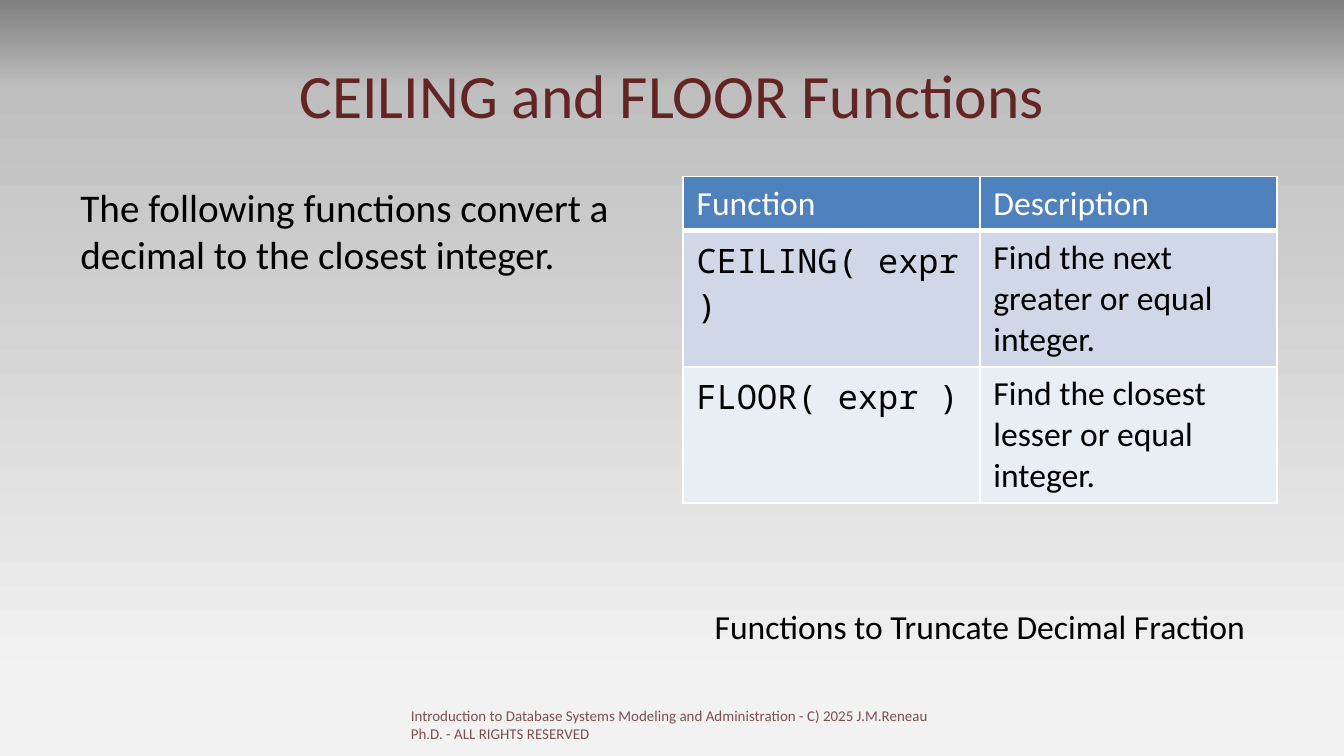
import copy
import pptx
import pptx.dml.color
import pptx.enum.text
import pptx.oxml
import pptx.oxml.ns
import pptx.util

Pt = pptx.util.Pt
RGB = pptx.dml.color.RGBColor
ALIGN = pptx.enum.text.PP_ALIGN
ANCHOR = pptx.enum.text.MSO_ANCHOR

BLACK = RGB(0x00, 0x00, 0x00)
WHITE = RGB(0xFF, 0xFF, 0xFF)
MAROON = RGB(0x63, 0x25, 0x23)
BLUE = RGB(0x4F, 0x81, 0xBD)
BANDS = [RGB(0xD0, 0xD8, 0xE8), RGB(0xE9, 0xED, 0xF4)]
SHADES = [(0, RGB(0x80, 0x80, 0x80)), (0.12, RGB(0xBF, 0xBF, 0xBF)),
          (0.9, RGB(0xF2, 0xF2, 0xF2))]
SANS = "Calibri"
MONO = "Noto Sans Mono"
ROWS = [
    ("Function", "Description"),
    ("CEILING( expr )", "Find the next greater or equal integer."),
    ("FLOOR( expr )", "Find the closest lesser or equal integer."),
]
HEIGHTS = [29, 73, 73]


def paint_back(slide):
    """Fill the background with a vertical grey gradient."""
    fill = slide.background.fill
    fill.gradient()
    fill.gradient_angle = 270
    stops = slide.element.xpath(".//a:gsLst")[0]
    stops.append(copy.deepcopy(stops[-1]))
    for stop, (place, shade) in zip(fill.gradient_stops, SHADES):
        stop.position = place
        stop.color.rgb = shade


def add_run(para, text, size, color, font=SANS):
    """Add one formatted run to a paragraph."""
    run = para.add_run()
    run.text = text
    run.font.size = Pt(size)
    run.font.name = font
    run.font.color.rgb = color
    return run


def add_title(slide, box, text):
    """Move the title placeholder into the box and fill it."""
    title = slide.shapes.title
    title.left, title.top, title.width, title.height = map(Pt, box)
    frame = title.text_frame
    frame.auto_size = pptx.enum.text.MSO_AUTO_SIZE.NONE
    frame.vertical_anchor = ANCHOR.MIDDLE
    para = frame.paragraphs[0]
    para.alignment = ALIGN.CENTER
    add_run(para, text, 33, MAROON)


def add_text(slide, box, text, size, color=BLACK, align=ALIGN.LEFT, gap=0):
    """Add a wrapped text box and return its run."""
    frame = slide.shapes.add_textbox(*map(Pt, box)).text_frame
    frame.word_wrap = True
    para = frame.paragraphs[0]
    para.alignment = align
    para.space_before = Pt(gap)
    return add_run(para, text, size, color)


def add_foot(slide, box, text):
    """Add the footer in slightly clear maroon."""
    run = add_text(slide, box, text, 8, MAROON)
    tint = run.font.fill.fore_color
    tint.rgb = MAROON
    color = run.font.element.xpath(".//a:srgbClr")[0] if hasattr(
        run.font, "element") else slide.shapes[-1].element.xpath(".//a:srgbClr")[0]
    alpha = pptx.oxml.parse_xml(
        f'<a:alpha {pptx.oxml.ns.nsdecls("a")} val="80000"/>')
    color.append(alpha)


def add_edge(cell, side, width):
    """Give one side of a cell a white border."""
    cell._tc.get_or_add_tcPr().append(pptx.oxml.parse_xml(
        f'<a:ln{side} {pptx.oxml.ns.nsdecls("a")} w="{Pt(width)}">'
        f'<a:solidFill><a:srgbClr val="{WHITE}"/></a:solidFill></a:ln{side}>'))


def add_grid(slide, box):
    """Add the table of functions with a header and banded rows."""
    grid = slide.shapes.add_table(len(ROWS), 2, *map(Pt, box)).table
    for r, texts in enumerate(ROWS):
        grid.rows[r].height = Pt(HEIGHTS[r])
        head = r == 0
        for c, text in enumerate(texts):
            cell = grid.cell(r, c)
            for side in "LRTB":
                add_edge(cell, side, 3 if head and side == "B" else 1)
            cell.fill.solid()
            cell.fill.fore_color.rgb = BLUE if head else BANDS[r - 1]
            font = MONO if c == 0 and not head else SANS
            run = add_run(cell.text_frame.paragraphs[0], text, 18,
                          WHITE if head else BLACK, font)
            run.font.bold = False


def build_slide(deck):
    """Place all regions on a title-only slide."""
    slide = deck.slides.add_slide(deck.slide_layouts[5])
    paint_back(slide)
    left, top, wide, right = 36, 94.5, 318, 366
    add_title(slide, (left, 16.5, 648, 67.5), "CEILING and FLOOR Functions")
    add_text(slide, (left, top, wide, 267),
             "The following functions convert a decimal to the closest integer.",
             21, gap=4.2)
    add_grid(slide, (right, top, wide, sum(HEIGHTS)))
    add_text(slide, (right, 321, wide, 40.5),
             "Functions to Truncate Decimal Fraction", 18, align=ALIGN.CENTER)
    add_foot(slide, (213, 375, 292.5, 21.5),
             "Introduction to Database Systems Modeling and Administration"
             " - C) 2025 J.M.Reneau Ph.D. - ALL RIGHTS RESERVED")


def main():
    """Build the deck and save it."""
    deck = pptx.Presentation()
    deck.slide_width, deck.slide_height = Pt(720), Pt(405)
    build_slide(deck)
    deck.save("out.pptx")


if __name__ == "__main__":
    main()
